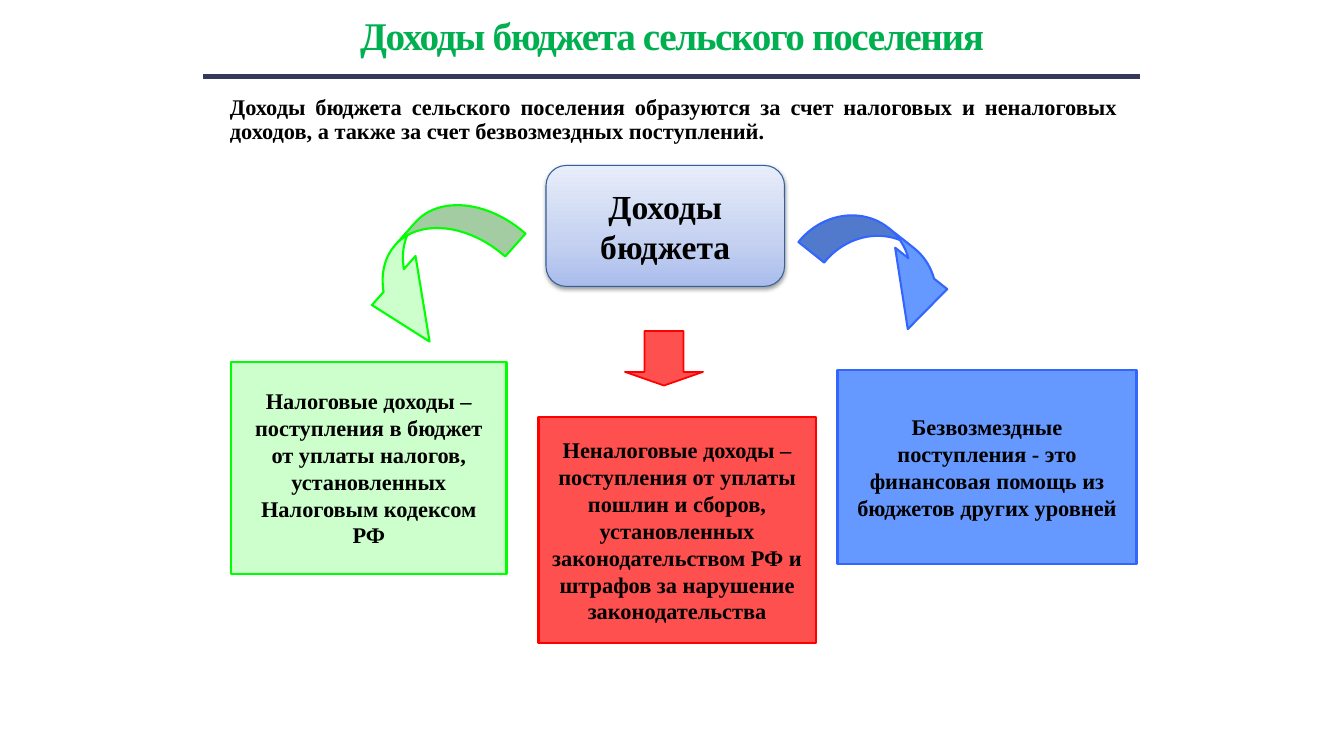
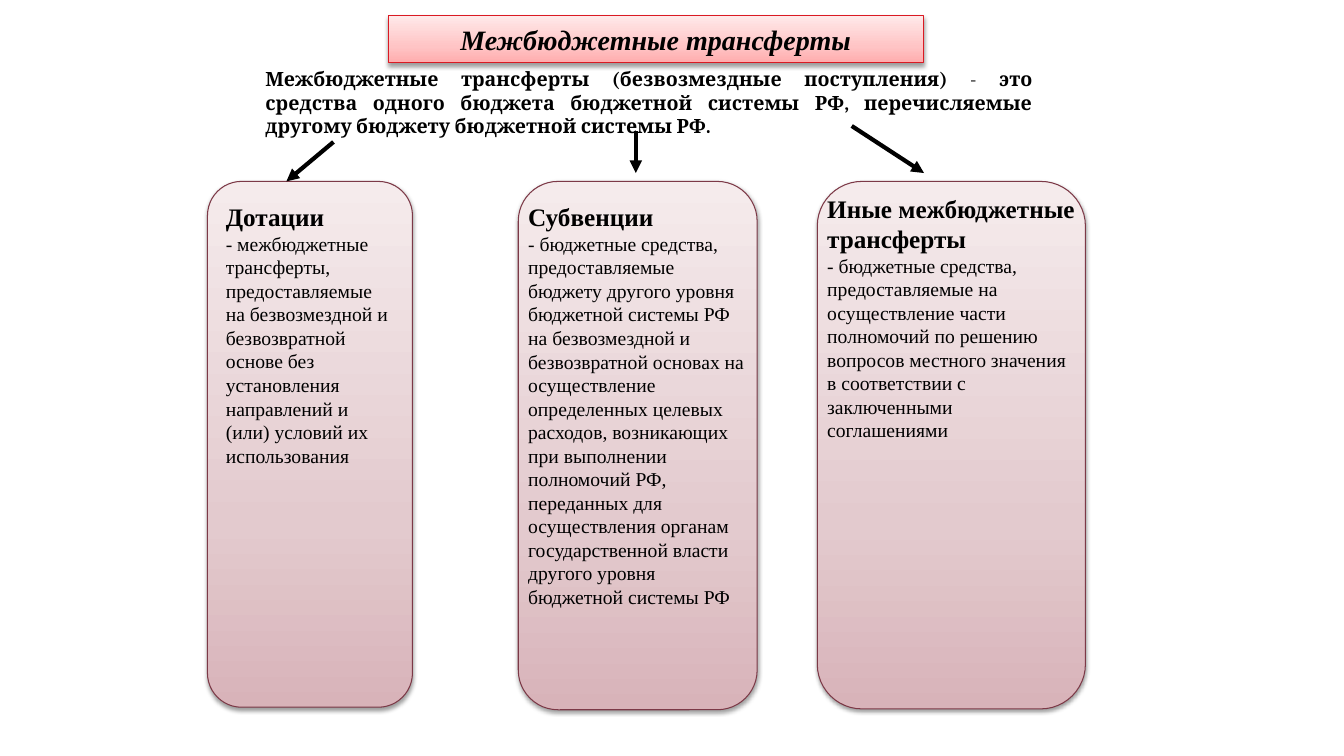
"""Build two slides on the revenue of a village budget and its transfers."""
from dataclasses import dataclass
from typing import NamedTuple

from lxml import etree
from pptx import Presentation
from pptx import util as u
from pptx.dml.color import RGBColor
from pptx.enum import shapes, text
from pptx.oxml.ns import qn

COLUMNS, ROWS = 160, 90
CELL = u.Inches(13.3333) // COLUMNS

BLACK = RGBColor(0x00, 0x00, 0x00)
TITLE_GREEN = RGBColor(0x00, 0xB0, 0x50)
RULE_NAVY = RGBColor(0x35, 0x38, 0x5A)
GREEN_FILL, GREEN_LINE = RGBColor(0xCC, 0xFF, 0xCC), RGBColor(0x00, 0xFF, 0x00)
RED_FILL, RED_LINE = RGBColor(0xFF, 0x50, 0x50), RGBColor(0xFF, 0x00, 0x00)
BLUE_FILL, BLUE_LINE = RGBColor(0x66, 0x99, 0xFF), RGBColor(0x33, 0x66, 0xFF)
HUB_LINE = RGBColor(0x35, 0x60, 0x9C)
HEADER_LINE = RGBColor(0xDA, 0x1A, 0x23)
CARD_LINE = RGBColor(0x7C, 0x39, 0x47)
HUB_STOPS = (RGBColor(0xA9, 0xBC, 0xEC), RGBColor(0xC3, 0xD0, 0xF0), RGBColor(0xE8, 0xED, 0xFA))
HEADER_STOPS = (RGBColor(0xFF, 0xAC, 0xAD), RGBColor(0xFF, 0xC4, 0xC5), RGBColor(0xFF, 0xE9, 0xE9))
CARD_STOPS = (RGBColor(0xD8, 0xB3, 0xB9), RGBColor(0xE3, 0xCA, 0xCE), RGBColor(0xF5, 0xEB, 0xEC))
STOP_SHARES = (0, 35, 100)

KIND = shapes.MSO_SHAPE
ALIGN = text.PP_ALIGN
ANCHOR = text.MSO_ANCHOR


class Area(NamedTuple):
    """A rectangle in grid columns and rows."""
    column: float
    row: float
    columns: float
    rows: float


class Style(NamedTuple):
    """The look of a paragraph."""
    size: float
    bold: bool = True
    italic: bool = False
    align: ALIGN = ALIGN.LEFT
    color: RGBColor = BLACK
    font: str = "Times New Roman"
    line_spacing: float | None = None


class Paint(NamedTuple):
    """A flat fill, or gradient stops from bottom to top, with an outline."""
    fill: RGBColor | tuple[RGBColor, ...]
    line: RGBColor
    width: float = 1.5


@dataclass(frozen=True)
class Source:
    """A kind of revenue in a coloured box."""
    area: Area
    paint: Paint
    side_margin: float
    wording: str


@dataclass(frozen=True)
class Arrow:
    """A block arrow leading to a revenue box."""
    kind: KIND
    area: Area
    paint: Paint
    adjustments: tuple[float, ...]
    rotation: float = 0


@dataclass(frozen=True)
class Transfer:
    """A card that explains one kind of transfer."""
    card: Area
    label: Area
    heading: str
    body: str


TITLE = Style(28, align=ALIGN.CENTER, color=TITLE_GREEN)
INTRO = Style(16, align=ALIGN.JUSTIFY, line_spacing=0.9)
HUB = Style(24, align=ALIGN.CENTER)
BOX = Style(16, align=ALIGN.CENTER)
HEADER = Style(20, italic=True, align=ALIGN.CENTER)
DEFINITION = Style(14, align=ALIGN.JUSTIFY, font="Cambria")
CARD_HEADING = Style(18)
CARD_BODY = Style(14, bold=False)

GREEN = Paint(GREEN_FILL, GREEN_LINE)
RED = Paint(RED_FILL, RED_LINE)
BLUE = Paint(BLUE_FILL, BLUE_LINE)
CARD = Paint(CARD_STOPS, CARD_LINE, 0.75)

SOURCES = (
    Source(Area(27.5, 43.1, 32.8, 25.2), GREEN, 0.12,
           "Налоговые доходы – поступления в бюджет от уплаты налогов, "
           "установленных Налоговым кодексом РФ"),
    Source(Area(64.1, 49.7, 33, 26.9), RED, 0,
           "Неналоговые доходы – поступления от уплаты пошлин и сборов, установленных "
           "законодательством РФ и штрафов за нарушение законодательства"),
    Source(Area(99.7, 44, 35.6, 23.2), BLUE, 0.12,
           "Безвозмездные поступления - это финансовая помощь из бюджетов других уровней"),
)
ARROWS = (
    Arrow(KIND.CURVED_DOWN_ARROW, Area(95.3, 28.1, 20.6, 8), BLUE, (0.49, 0.99, 0.83), 38.5),
    Arrow(KIND.CURVED_UP_ARROW, Area(41, 26.8, 21.1, 10.7), GREEN, (0.34, 0.73, 0.75), 131.6),
    Arrow(KIND.DOWN_ARROW, Area(74.4, 39.4, 9.3, 6.5), RED._replace(width=1.25), (0.5, 0.25)),
)
TRANSFERS = (
    Transfer(Area(24.7, 21.6, 24.4, 62.6), Area(25.7, 23.4, 22.4, 32.8), "Дотации",
             "- межбюджетные трансферты, предоставляемые на безвозмездной и безвозвратной "
             "основе без установления направлений и (или) условий их использования"),
    Transfer(Area(61.7, 21.6, 28.44, 62.9), Area(61.7, 23.4, 28.44, 55.1), "Субвенции",
             "- бюджетные средства, предоставляемые бюджету другого уровня бюджетной системы РФ "
             "на безвозмездной и безвозвратной основах на осуществление определенных целевых "
             "расходов, возникающих при выполнении полномочий РФ, переданных для осуществления "
             "органам государственной власти другого уровня бюджетной системы РФ"),
    Transfer(Area(97.3, 21.6, 31.92, 62.8), Area(97.3, 22.4, 31.92, 37.2),
             "Иные межбюджетные трансферты",
             "- бюджетные средства, предоставляемые на осуществление части полномочий по "
             "решению вопросов местного значения в соответствии с заключенными соглашениями"),
)
POINTERS = ((39.7, 16.9, 34.1, 21.6), (75.7, 15.6, 75.7, 20.6), (101.4, 15, 110, 20.6))


def cells(lengths) -> list[int]:
    """Turn grid lengths into slide units."""
    return [round(length * CELL) for length in lengths]


def write(box, paragraphs, anchor=ANCHOR.TOP, side=0.1, edge=0.05, wrap=True) -> None:
    """Fill a box with styled paragraphs; each wording is a list of spans."""
    frame = box.text_frame
    frame.word_wrap = wrap
    frame.vertical_anchor = anchor
    frame.margin_left = frame.margin_right = u.Inches(side)
    frame.margin_top = frame.margin_bottom = u.Inches(edge)
    for index, (style, wordings) in enumerate(paragraphs):
        para = frame.add_paragraph() if index else frame.paragraphs[0]
        para.alignment = style.align
        if style.line_spacing:
            para.line_spacing = style.line_spacing
        font = para.font
        font.name, font.size = style.font, u.Pt(style.size)
        font.bold, font.italic = style.bold, style.italic
        font.color.rgb = style.color
        for wording in wordings:
            para.add_run().text = wording


def add_label(page, area: Area, paragraphs, **layout):
    """Add a text box."""
    box = page.shapes.add_textbox(*cells(area))
    write(box, paragraphs, **layout)
    return box


def add_gradient(shape, stops: tuple[RGBColor, ...]) -> None:
    """Fill a shape from bottom to top and give it a soft shadow."""
    shape.fill.gradient()
    shape.fill.gradient_angle = 90
    properties = shape._element.spPr
    stop_list = properties.find(qn("a:gradFill")).find(qn("a:gsLst"))
    for stop in list(stop_list):
        stop_list.remove(stop)
    for share, color in zip(STOP_SHARES, stops):
        stop = etree.SubElement(stop_list, qn("a:gs"), pos=str(share * 1000))
        etree.SubElement(stop, qn("a:srgbClr"), val=str(color))
    shadow = etree.SubElement(properties.find(qn("a:effectLst")), qn("a:outerShdw"),
                              blurRad="40000", dist="20000", dir="5400000", rotWithShape="0")
    shade = etree.SubElement(shadow, qn("a:srgbClr"), val=str(BLACK))
    etree.SubElement(shade, qn("a:alpha"), val="38000")


def add_block(page, kind: KIND, area: Area, paint: Paint):
    """Add a preset shape with its fill and outline."""
    shape = page.shapes.add_shape(kind, *cells(area))
    shape.shadow.inherit = False
    if isinstance(paint.fill, RGBColor):
        shape.fill.solid()
        shape.fill.fore_color.rgb = paint.fill
    else:
        add_gradient(shape, paint.fill)
    shape.line.color.rgb = paint.line
    shape.line.width = u.Pt(paint.width)
    return shape


def add_line(page, ends, color: RGBColor, width: float, arrow: bool = False) -> None:
    """Add a straight line, with an arrowhead at its end if asked."""
    line = page.shapes.add_connector(shapes.MSO_CONNECTOR.STRAIGHT, *cells(ends))
    line.line.color.rgb = color
    line.line.width = u.Pt(width)
    properties = line._element.spPr
    if arrow:
        etree.SubElement(properties.find(qn("a:ln")), qn("a:tailEnd"), type="triangle")
    etree.SubElement(properties, qn("a:effectLst"))


def add_revenue(page) -> None:
    """Draw the sources of budget revenue."""
    title = add_label(page, Area(26, 2.9, 108, 4.6),
                      [(TITLE, ["Доходы бюджета сельского поселения"])], anchor=ANCHOR.BOTTOM)
    title.text_frame.paragraphs[0].runs[0]._r.get_or_add_rPr().set("spc", "-100")
    add_label(page, Area(26.2, 10.9, 108, 7),
              [(INTRO, ["Доходы бюджета сельского поселения образуются за счет налоговых и "
                        "неналоговых доходов, а также за счет безвозмездных поступлений."])])
    add_line(page, (24.2, 9.1, 135.7, 9.1), RULE_NAVY, 3.75)
    hub = add_block(page, KIND.ROUNDED_RECTANGLE, Area(65, 19.7, 28.4, 14.4),
                    Paint(HUB_STOPS, HUB_LINE, 0.75))
    write(hub, [(HUB, ["Доходы бюджета"])], anchor=ANCHOR.MIDDLE, side=0.14)
    for source in SOURCES:
        box = add_block(page, KIND.RECTANGLE, source.area, source.paint)
        write(box, [(BOX, [source.wording])], anchor=ANCHOR.MIDDLE,
              side=source.side_margin, edge=0)
    for arrow in ARROWS:
        shape = add_block(page, arrow.kind, arrow.area, arrow.paint)
        shape.rotation = arrow.rotation
        for index, value in enumerate(arrow.adjustments):
            shape.adjustments[index] = value


def add_transfers(page) -> None:
    """Draw the kinds of transfers between budgets."""
    header = add_block(page, KIND.RECTANGLE, Area(46.2, 1.9, 63.7, 5.6),
                       Paint(HEADER_STOPS, HEADER_LINE, 0.75))
    write(header, [(HEADER, ["Межбюджетные трансферты"])], anchor=ANCHOR.MIDDLE, wrap=False)
    for transfer in TRANSFERS:
        add_block(page, KIND.FLOWCHART_ALTERNATE_PROCESS, transfer.card, CARD)
        add_label(page, transfer.label, [(CARD_HEADING, [transfer.heading]),
                                         (CARD_BODY, [transfer.body])])
    for ends in POINTERS:
        add_line(page, ends, BLACK, 3, arrow=True)
    definition = add_label(
        page, Area(30.4, 7.4, 93.7, 9.6),
        [(DEFINITION, ["Межбюджетные трансферты (безвозмездные поступления)", " -",
                       " это средства одного бюджета бюджетной системы РФ, перечисляемые "
                       "другому бюджету бюджетной системы РФ."])])
    definition.text_frame.paragraphs[0].runs[1].font.bold = False


def main() -> None:
    """Build and save the deck."""
    deck = Presentation()
    deck.slide_width, deck.slide_height = cells((COLUMNS, ROWS))
    for draw in (add_revenue, add_transfers):
        draw(deck.slides.add_slide(deck.slide_layouts[6]))
    deck.save("out.pptx")


if __name__ == "__main__":
    main()
